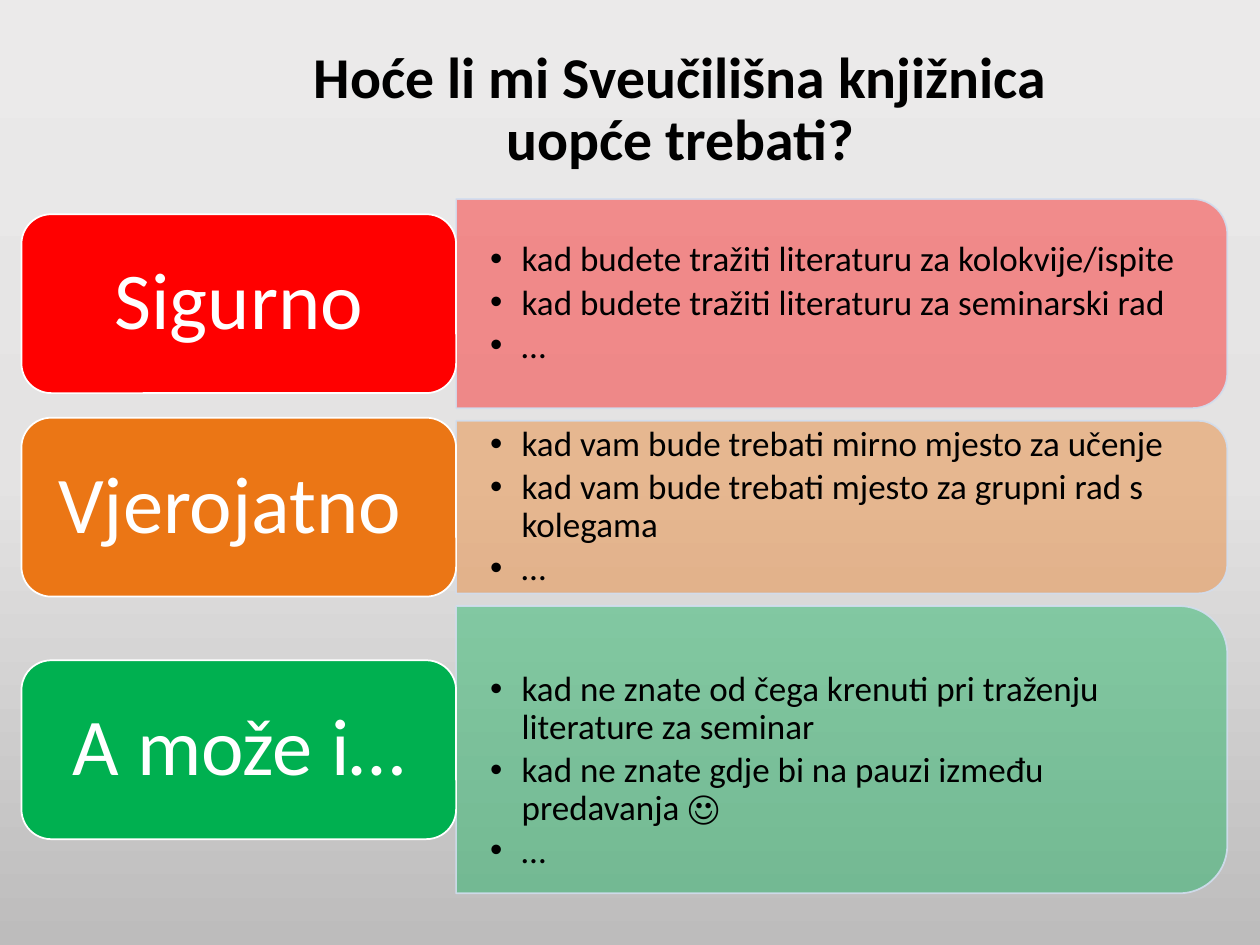
from copy import deepcopy
from pptx import Presentation
from pptx.dml.color import RGBColor
from pptx.enum.shapes import MSO_SHAPE
from pptx.enum.text import MSO_ANCHOR, MSO_AUTO_SIZE, PP_ALIGN
from pptx.oxml.ns import qn
from pptx.util import Inches, Pt
from lxml.etree import SubElement

BLACK = RGBColor(0x00, 0x00, 0x00)
WHITE = RGBColor(0xFF, 0xFF, 0xFF)
RED = RGBColor(0xFF, 0x00, 0x00)
ORANGE = RGBColor(0xEB, 0x76, 0x15)
GREEN = RGBColor(0x00, 0xB0, 0x50)
EDGE = RGBColor(0xD2, 0xDE, 0xEF)
SHADES = [
    (0, RGBColor(0xEB, 0xEA, 0xEA)),
    (0.5, RGBColor(0xE4, 0xE3, 0xE3)),
    (1, RGBColor(0xBD, 0xBC, 0xBC)),
]
FONT = "Calibri"

LEFT, TOP, GAP = 0.17, 1.58, 0.1
LABEL_W, LABEL_H = 3.45, 1.42
PANEL_W, LIST_W = 6.12, 6.04
ROWS = [
    ("Sigurno", RED, 1.66, 0.14, [
        "kad budete tražiti literaturu za kolokvije/ispite",
        "kad budete tražiti literaturu za seminarski rad",
        "…",
    ]),
    ("Vjerojatno ", ORANGE, 1.37, 0.14, [
        "kad vam bude trebati mirno mjesto za učenje",
        "kad vam bude trebati mjesto za grupni rad s kolegama",
        "…",
    ]),
    ("A može i…", GREEN, 2.28, 0.48, [
        "kad ne znate od čega krenuti pri traženju literature za seminar",
        "kad ne znate gdje bi na pauzi između predavanja ☺",
        "…",
    ]),
]


def place(shape, left, top, width, height):
    """Move a shape to a box given in inches."""
    shape.left, shape.top = Inches(left), Inches(top)
    shape.width, shape.height = Inches(width), Inches(height)


def write(shape, lines, size, color=BLACK, bold=False, align=PP_ALIGN.CENTER,
          after=0, inset=(0.1, 0.05, 0.1, 0.05), bullet=False):
    """Fill a shape with formatted paragraphs."""
    frame = shape.text_frame
    frame.text = "\n".join(lines)
    frame.word_wrap = True
    frame.auto_size = MSO_AUTO_SIZE.NONE
    frame.vertical_anchor = MSO_ANCHOR.MIDDLE
    (frame.margin_left, frame.margin_top,
     frame.margin_right, frame.margin_bottom) = map(Inches, inset)
    for para in frame.paragraphs:
        para.alignment = align
        para.line_spacing = 0.9
        para.space_before = Pt(0)
        para.space_after = Pt(after)
        font = para.runs[0].font
        font.name, font.size, font.bold = FONT, Pt(size), bold
        font.color.rgb = color
        if bullet:
            dot(para)


def dot(para):
    """Give a paragraph a round bullet and a hanging indent."""
    props = para._p.get_or_add_pPr()
    props.set("marL", str(Inches(0.25)))
    props.set("indent", str(-Inches(0.25)))
    SubElement(props, qn("a:buFont")).set("typeface", "Arial")
    SubElement(props, qn("a:buChar")).set("char", "•")


def fade(shape, part, share):
    """Set the opacity of the colour under a fill or line element."""
    color = shape.element.spPr.find(part + "/" + qn("a:srgbClr"))
    SubElement(color, qn("a:alpha")).set("val", str(share * 1000))


def block(slide, kind, box, fill, line):
    """Add a filled and outlined preset shape."""
    shape = slide.shapes.add_shape(kind, *map(Inches, box))
    shape.shadow.inherit = False
    shape.fill.solid()
    shape.fill.fore_color.rgb = fill
    shape.line.color.rgb = line
    shape.line.width = Pt(1)
    return shape


def panel(slide, left, mid, width, height, color):
    """Draw a pale panel with its right corners rounded."""
    box = (left + (width - height) / 2, mid - width / 2, height, width)
    shape = block(slide, MSO_SHAPE.ROUND_2_SAME_RECTANGLE, box, color, EDGE)
    shape.rotation = 90
    fade(shape, qn("a:solidFill"), 40)
    fade(shape, qn("a:ln") + "/" + qn("a:solidFill"), 90)


def row(slide, body, top, height, label, color, inset, items):
    """Build one row: pale panel, bullet list and label card."""
    mid = top + height / 2
    side = LEFT + LABEL_W
    panel(slide, side, mid, PANEL_W, height, color)
    tall = 0.9 * height
    place(body, side, mid - tall / 2, LIST_W, tall)
    write(body, items, 20, align=PP_ALIGN.LEFT, after=3,
          inset=(0.27, inset, 0.27, 0.14), bullet=True)
    slide.shapes._spTree.append(body.element)
    box = (LEFT, mid - LABEL_H / 2, LABEL_W, LABEL_H)
    card = block(slide, MSO_SHAPE.ROUNDED_RECTANGLE, box, color, WHITE)
    write(card, [label], 46, color=WHITE, inset=(0.19, 0.1, 0.19, 0.1))


def backdrop(slide):
    """Shade the background from light at the top to grey below."""
    fill = slide.background.fill
    fill.gradient()
    fill.gradient_angle = 270
    stops = slide.element.find(".//" + qn("a:gsLst"))
    stops.append(deepcopy(stops[0]))
    for stop, (pos, color) in zip(fill.gradient_stops, SHADES):
        stop.position = pos
        stop.color.rgb = color


def main():
    """Build and save the deck."""
    deck = Presentation()
    deck.slide_width, deck.slide_height = Inches(10), Inches(7.5)
    slide = deck.slides.add_slide(deck.slide_layouts[4])
    backdrop(slide)
    title, *bodies, spare = list(slide.placeholders)
    spare.element.getparent().remove(spare.element)
    place(title, 2.13, 0.17, 6.54, 1.42)
    write(title, ["Hoće li mi Sveučilišna knjižnica uopće trebati?"], 33, bold=True)
    top = TOP
    for body, (label, color, height, inset, items) in zip(bodies, ROWS):
        row(slide, body, top, height, label, color, inset, items)
        top += height + GAP
    deck.save("out.pptx")


if __name__ == "__main__":
    main()
